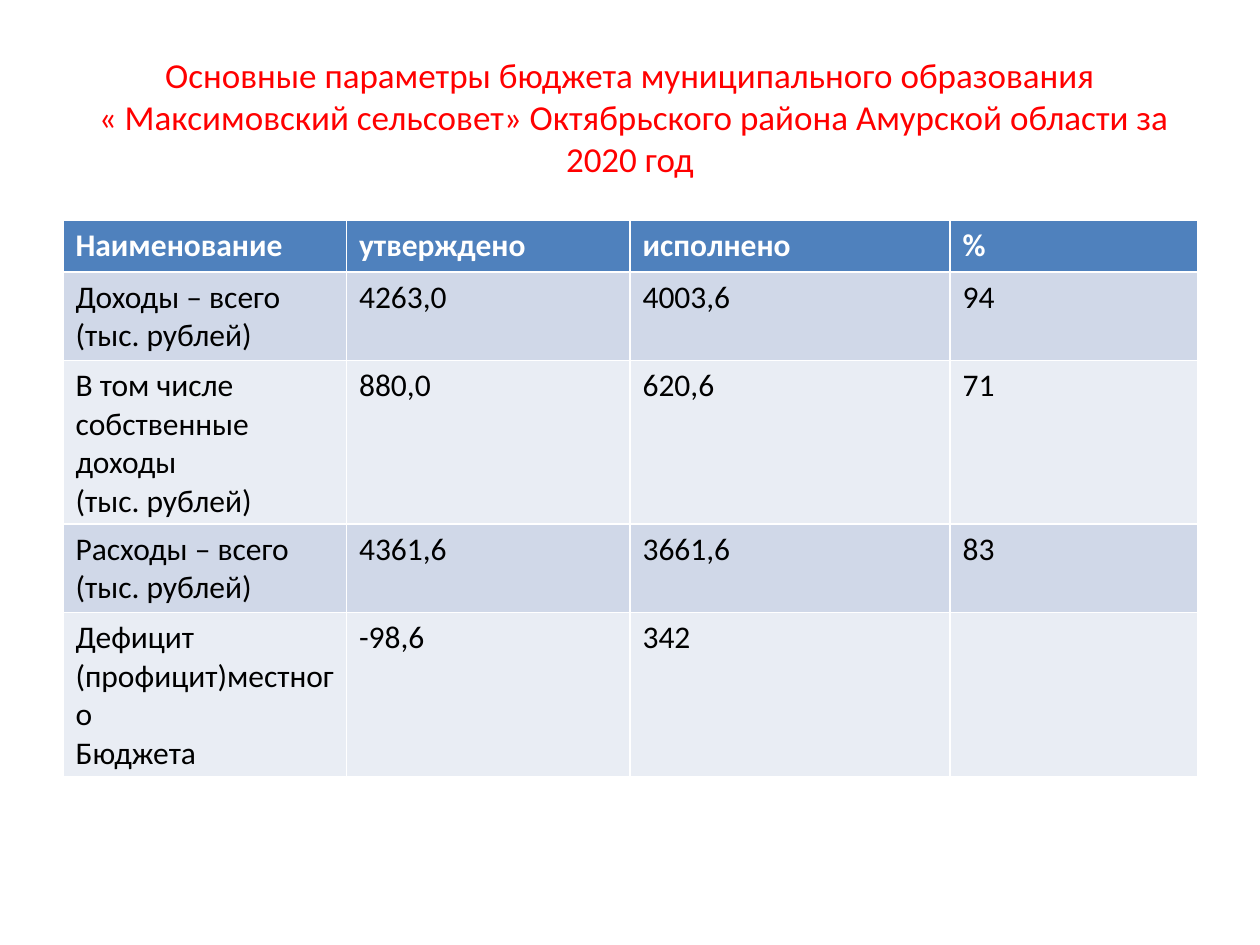
import dataclasses

import pptx
import pptx.dml.color
import pptx.enum.text
import pptx.util


@dataclasses.dataclass(frozen=True)
class Theme:
    """Colours, font and type sizes of the slide."""

    font: str = "Calibri"
    title: str = "FF0000"
    head: str = "4F81BD"
    bands: tuple = ("D0D8E8", "E9EDF4")
    light: str = "FFFFFF"
    dark: str = "000000"
    big: int = 20
    small: int = 18


THEME = Theme()
WIDE, HIGH = 10, 7.5
COLS = (2.25, 2.25, 2.54, 1.97)
ROW = 0.41
TITLE = (
    "Основные параметры бюджета муниципального образования\v"
    " « Максимовский сельсовет» Октябрьского района Амурской области за 2020 год"
)
ROWS = (
    ("Наименование", "утверждено", "исполнено", "%"),
    ("Доходы – всего\n(тыс. рублей)", "4263,0", "4003,6", "94"),
    ("В том числе\nсобственные доходы\n(тыс. рублей)", "880,0", "620,6", "71"),
    ("Расходы – всего\n(тыс. рублей)", "4361,6", "3661,6", "83"),
    ("Дефицит (профицит)местного\nБюджета", "-98,6", "342", ""),
)


def place(left, top, width, height):
    """Turn shares of the slide into lengths."""
    shares = (left * WIDE, top * HIGH, width * WIDE, height * HIGH)
    return [pptx.util.Inches(x) for x in shares]


def rgb(code):
    """Make a colour from its hex code."""
    return pptx.dml.color.RGBColor.from_string(code)


def style(frame, size, color, bold=False):
    """Format every run of a text frame."""
    for para in frame.paragraphs:
        for run in para.runs:
            font = run.font
            font.name, font.size, font.bold = THEME.font, pptx.util.Pt(size), bold
            font.color.rgb = rgb(color)


def add_title(slide, text):
    """Add the centred title."""
    frame = slide.shapes.add_textbox(*place(0.05, 0.04, 0.9, 1 / 6)).text_frame
    frame.word_wrap = True
    frame.vertical_anchor = pptx.enum.text.MSO_ANCHOR.MIDDLE
    frame.text = text
    frame.paragraphs[0].alignment = pptx.enum.text.PP_ALIGN.CENTER
    style(frame, THEME.big, THEME.title)


def add_budget(slide, rows):
    """Add the budget table with a header and banded rows."""
    area = place(0.05, 1.75 / HIGH, 0.9, len(rows) * ROW / HIGH)
    table = slide.shapes.add_table(len(rows), len(COLS), *area).table
    for col, width in zip(table.columns, COLS):
        col.width = pptx.util.Inches(width)
    for i, texts in enumerate(rows):
        head = i == 0
        fill = THEME.head if head else THEME.bands[(i - 1) % 2]
        for j, text in enumerate(texts):
            cell = table.cell(i, j)
            cell.fill.solid()
            cell.fill.fore_color.rgb = rgb(fill)
            cell.text_frame.text = text
            style(cell.text_frame, THEME.small, THEME.light if head else THEME.dark, head)


def main():
    """Build and save the slide."""
    deck = pptx.Presentation()
    deck.slide_width = pptx.util.Inches(WIDE)
    deck.slide_height = pptx.util.Inches(HIGH)
    slide = deck.slides.add_slide(deck.slide_layouts[6])
    add_title(slide, TITLE)
    add_budget(slide, ROWS)
    deck.save("out.pptx")


if __name__ == "__main__":
    main()
